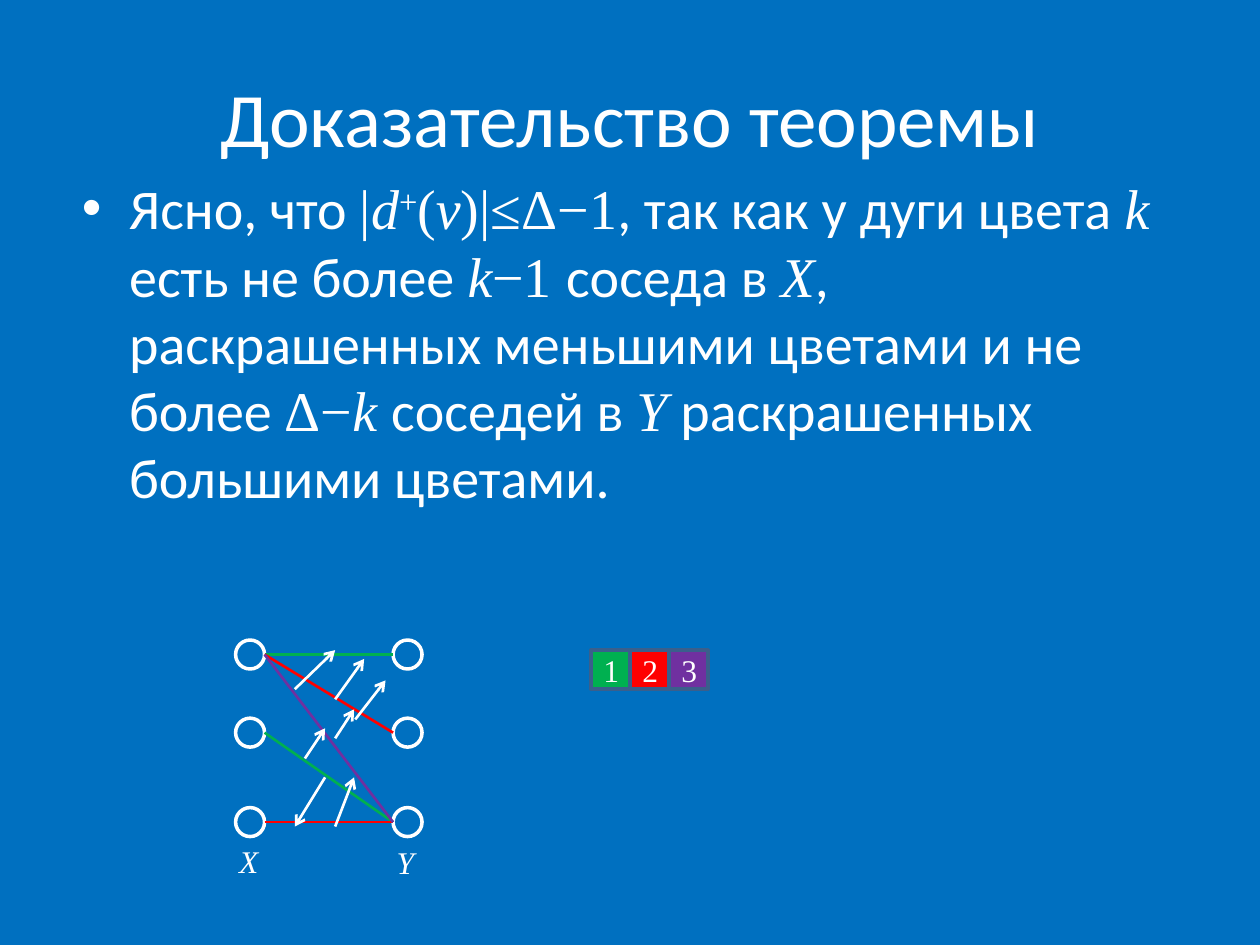
from dataclasses import dataclass

from lxml.etree import SubElement
from pptx import Presentation
from pptx.dml.color import RGBColor
from pptx.enum.shapes import MSO_CONNECTOR, MSO_SHAPE
from pptx.enum.text import MSO_ANCHOR, MSO_AUTO_SIZE, PP_ALIGN
from pptx.oxml.ns import qn
from pptx.util import Inches, Pt


@dataclass(frozen=True)
class Theme:
    blue: RGBColor = RGBColor(0x00, 0x70, 0xC0)
    white: RGBColor = RGBColor(0xFF, 0xFF, 0xFF)
    green: RGBColor = RGBColor(0x00, 0xB0, 0x50)
    red: RGBColor = RGBColor(0xFF, 0x00, 0x00)
    purple: RGBColor = RGBColor(0x70, 0x30, 0xA0)
    frame: RGBColor = RGBColor(0x3A, 0x5F, 0x8C)
    sans: str = "Calibri"
    serif: str = "Times New Roman"
    title: Pt = Pt(44)
    body: Pt = Pt(32)
    label: Pt = Pt(18)
    outline: Pt = Pt(2)
    edge: Pt = Pt(1.5)


theme = Theme()


def style_font(font, name, size):
    font.name, font.size = name, size
    font.color.rgb = theme.white


def add_line(page, start, end, color):
    line = page.shapes.add_connector(
        MSO_CONNECTOR.STRAIGHT, *(Inches(value) for value in (*start, *end)))
    line.line.color.rgb = color
    line.line.width = theme.edge
    SubElement(line._element.spPr, qn("a:effectLst"))
    return line


deck = Presentation()
deck.slide_width, deck.slide_height = Inches(10), Inches(7.5)
page = deck.slides.add_slide(deck.slide_layouts[1])
page.background.fill.solid()
page.background.fill.fore_color.rgb = theme.blue

# Title
title = page.shapes.title
title.left, title.top = Inches(0.5), Inches(0.3)
title.width, title.height = Inches(9), Inches(1.25)
title.text_frame.text = "Доказательство теоремы"
style_font(title.text_frame.paragraphs[0].font, theme.sans, theme.title)

# Statement: plain words, upright math, italic variables and a superscript
body = page.placeholders[1]
body.left, body.top = Inches(0.55), Inches(1.33)
body.width, body.height = Inches(9), Inches(3.02)
para = body.text_frame.paragraphs[0]
style_font(para.font, theme.sans, theme.body)
statement = [
    ("Ясно, что ", "word"), ("|", "math"), ("d", "variable"),
    ("+", "super"), ("(", "math"), ("v", "variable"), (")|≤Δ−1", "math"),
    (", так как у дуги цвета ", "word"), ("k ", "variable"),
    ("есть не более ", "word"), ("k", "variable"), ("−1 ", "math"),
    ("соседа в ", "word"), ("X", "variable"),
    (", раскрашенных меньшими цветами и не более ", "word"),
    ("Δ−", "math"), ("k ", "variable"), ("соседей в ", "word"),
    ("Y", "variable"), (" раскрашенных большими цветами.", "word"),
]
for text, kind in statement:
    span = para.add_run()
    span.text = text
    if kind != "word":
        span.font.name = theme.serif
    if kind == "variable":
        span.font.italic = True
    if kind == "super":
        span._r.get_or_add_rPr().set("baseline", "30000")

# Bipartite graph: vertices
diameter = 0.23
x_left, y_left = 1.87, 3.12
row_tops = [5.08, 5.7, 6.41]
for left in (x_left, y_left):
    for top in row_tops:
        vertex = page.shapes.add_shape(
            MSO_SHAPE.OVAL, Inches(left), Inches(top),
            Inches(diameter), Inches(diameter))
        vertex.shadow.inherit = False
        vertex.fill.solid()
        vertex.fill.fore_color.rgb = theme.blue
        vertex.line.color.rgb = theme.white
        vertex.line.width = theme.outline

# Coloured edges, by row in X and row in Y
edges = [(0, 0, theme.green), (0, 1, theme.red), (1, 2, theme.green),
         (2, 2, theme.red), (0, 2, theme.purple)]
row_centers = [top + diameter / 2 for top in row_tops]
for x_row, y_row, color in edges:
    add_line(page, (x_left + diameter, row_centers[x_row]),
             (y_left, row_centers[y_row]), color)

# Colour key
side = 0.31
for index, color in enumerate((theme.green, theme.red, theme.purple)):
    box = page.shapes.add_shape(
        MSO_SHAPE.RECTANGLE, Inches(4.69 + index * side), Inches(5.16),
        Inches(side), Inches(side))
    box.shadow.inherit = False
    box.fill.solid()
    box.fill.fore_color.rgb = color
    box.line.color.rgb = theme.frame
    box.line.width = theme.outline
    box.text_frame.text = str(index + 1)
    box.text_frame.vertical_anchor = MSO_ANCHOR.MIDDLE
    para = box.text_frame.paragraphs[0]
    para.alignment = PP_ALIGN.CENTER
    style_font(para.font, theme.serif, theme.label)

# Names of the two parts
for name, left, top, width in (("X", 1.8, 6.63, 0.36), ("Y", 3.05, 6.64, 0.34)):
    box = page.shapes.add_textbox(
        Inches(left), Inches(top), Inches(width), Inches(0.4))
    box.text_frame.word_wrap = False
    box.text_frame.auto_size = MSO_AUTO_SIZE.SHAPE_TO_FIT_TEXT
    box.text_frame.text = name
    para = box.text_frame.paragraphs[0]
    style_font(para.font, theme.serif, theme.label)
    para.font.italic = True

# Arcs between neighbouring edges
arcs = [
    ((2.66, 5.86), (2.81, 5.63)), ((2.66, 5.55), (2.89, 5.23)),
    ((2.34, 5.47), (2.66, 5.16)), ((2.42, 6.02), (2.58, 5.78)),
    ((2.66, 6.56), (2.81, 6.17)), ((2.58, 6.17), (2.34, 6.56)),
    ((2.82, 5.71), (3.06, 5.4)),
]
for start, end in arcs:
    arc = add_line(page, start, end, theme.white)
    SubElement(arc.line._get_or_add_ln(), qn("a:tailEnd"), type="arrow")

deck.save("out.pptx")
